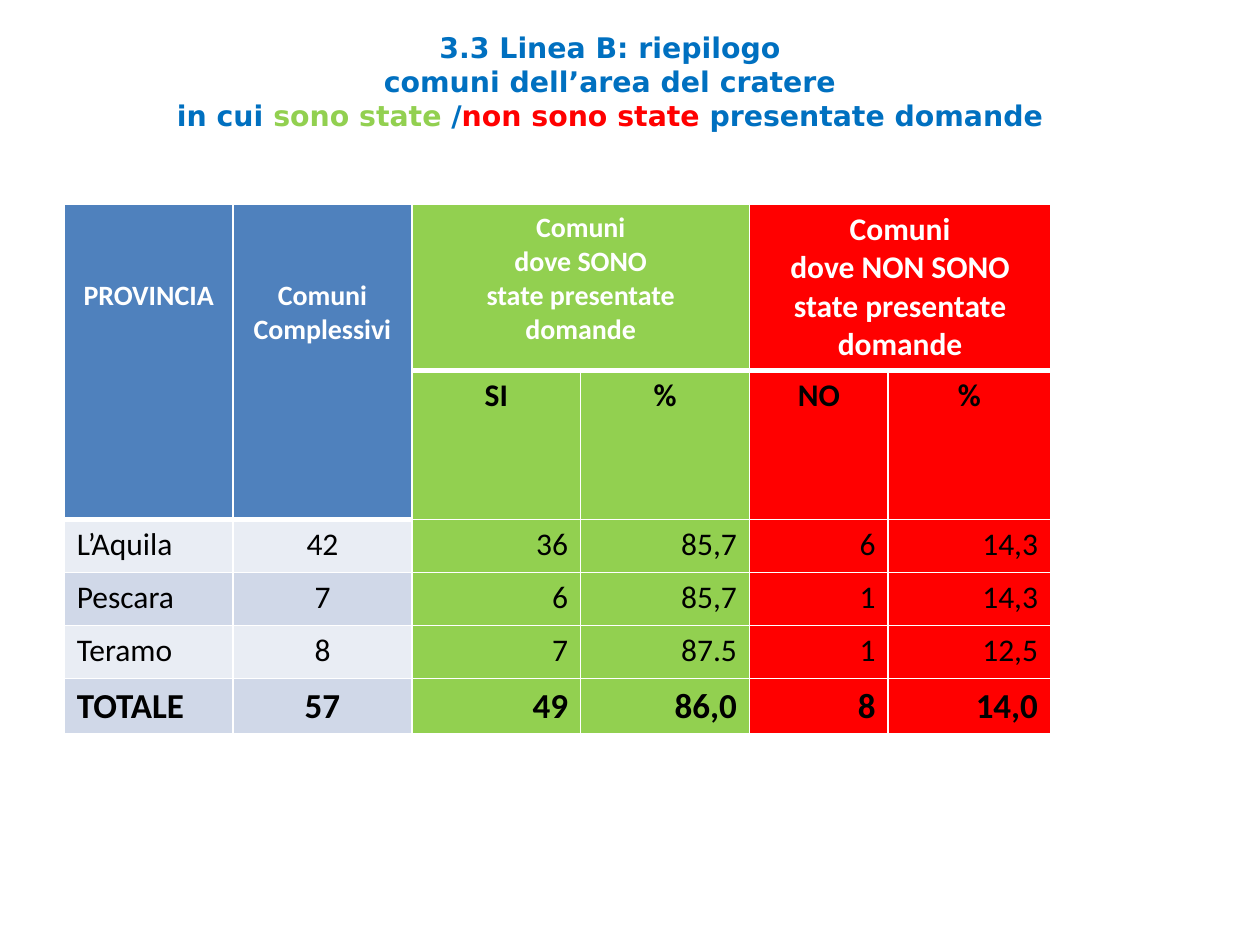
import dataclasses

import lxml.etree
import pptx
import pptx.dml.color
import pptx.enum.text
import pptx.oxml.ns
import pptx.util

Inches = pptx.util.Inches
ALIGN = pptx.enum.text.PP_ALIGN


@dataclasses.dataclass(frozen=True)
class Theme:
    """Colours, fonts and type sizes of the slide."""
    blue: str = "0070C0"
    green: str = "92D050"
    red: str = "FF0000"
    header: str = "4F81BD"
    bands: tuple = ("E9EDF4", "D0D8E8")
    white: str = "FFFFFF"
    black: str = "000000"
    title_font: str = "DejaVu Sans"
    table_font: str = "Calibri"
    title_size: float = 16.2
    small: int = 16
    body: int = 18
    total: int = 20


THEME = Theme()
TITLE = [
    [("3.3 Linea B: riepilogo", THEME.blue)],
    [("comuni dell’area del cratere", THEME.blue)],
    [("in cui ", THEME.blue), ("sono state ", THEME.green), ("/", THEME.blue),
     ("non sono state ", THEME.red), ("presentate domande", THEME.blue)],
]
COLUMNS = [1.34, 1.42, 1.34, 1.34, 1.1, 1.29]
ROWS = [1.31, 1.18, 0.42, 0.42, 0.42, 0.44]
GROUPS = [
    (0, (1, 0), ["PROVINCIA"], THEME.small),
    (1, (1, 1), ["Comuni", "Complessivi"], THEME.small),
    (2, (0, 3), ["Comuni", "dove SONO", "state presentate", "domande"], THEME.small),
    (4, (0, 5), ["Comuni", "dove NON SONO", "state presentate", "domande"], THEME.body),
]
SUBHEADS = ["SI", "%", "NO", "%"]
DATA = [
    ["L’Aquila", "42", "36", "85,7", "6", "14,3"],
    ["Pescara", "7", "6", "85,7", "1", "14,3"],
    ["Teramo", "8", "7", "87.5", "1", "12,5"],
    ["TOTALE", "57", "49", "86,0", "8", "14,0"],
]
DATA_ALIGN = [ALIGN.LEFT, ALIGN.CENTER] + [ALIGN.RIGHT] * 4


def add_run(p, text, font, size, color, bold):
    """Append one formatted run to a paragraph."""
    r = p.add_run()
    r.text = text
    r.font.name = font
    r.font.size = pptx.util.Pt(size)
    r.font.bold = bold
    r.font.color.rgb = pptx.dml.color.RGBColor.from_string(color)


def add_title(s):
    """Place the three-line coloured title."""
    sp = s.shapes.title
    sp.left, sp.top, sp.width, sp.height = map(Inches, (0.59, 0.21, 8.5, 0.87))
    tf = sp.text_frame
    tf.word_wrap = True
    tf.auto_size = pptx.enum.text.MSO_AUTO_SIZE.NONE
    tf.vertical_anchor = pptx.enum.text.MSO_ANCHOR.MIDDLE
    p = tf.paragraphs[0]
    p.alignment = ALIGN.CENTER
    for i, line in enumerate(TITLE):
        if i:
            p.add_line_break()
        for text, color in line:
            add_run(p, text, THEME.title_font, THEME.title_size, color, True)


def write_cell(cell, lines, align, size, color, bold):
    """Write each line as an aligned paragraph of the cell."""
    tf = cell.text_frame
    for i, line in enumerate(lines):
        p = tf.add_paragraph() if i else tf.paragraphs[0]
        p.alignment = align
        add_run(p, line, THEME.table_font, size, color, bold)


def set_borders(cell, widths):
    """Draw white left, right, top and bottom borders, widths in points."""
    tc_pr = cell._tc.get_or_add_tcPr()
    qn = pptx.oxml.ns.qn
    for i, (side, width) in enumerate(zip("LRTB", widths)):
        ln = lxml.etree.Element(qn(f"a:ln{side}"), w=str(pptx.util.Pt(width)))
        fill = lxml.etree.SubElement(ln, qn("a:solidFill"))
        lxml.etree.SubElement(fill, qn("a:srgbClr"), val=THEME.white)
        tc_pr.insert(i, ln)


def cell_fill(row, col):
    """Return the fill colour for a cell position."""
    if col >= 4:
        return THEME.red
    if col >= 2:
        return THEME.green
    return THEME.header if row < 2 else THEME.bands[row % 2]


def style_cell(cell, row, col):
    """Fill the cell and draw a thick rule under its column heading."""
    cell.fill.solid()
    cell.fill.fore_color.rgb = pptx.dml.color.RGBColor.from_string(cell_fill(row, col))
    head_end = 1 if col < 2 else 0
    top = 3 if row == head_end + 1 else 1
    bottom = 3 if row <= head_end else 1
    set_borders(cell, (1, 1, top, bottom))


def add_summary_table(s):
    """Build the table of municipalities by province."""
    frame = s.shapes.add_table(len(ROWS), len(COLUMNS), Inches(0.51), Inches(1.62),
                               Inches(sum(COLUMNS)), Inches(sum(ROWS)))
    table = frame.table
    table.first_row = table.horz_banding = False
    for column, width in zip(table.columns, COLUMNS):
        column.width = Inches(width)
    for row, height in zip(table.rows, ROWS):
        row.height = Inches(height)
    for row in range(len(ROWS)):
        for col in range(len(COLUMNS)):
            style_cell(table.cell(row, col), row, col)
    for col, end, lines, size in GROUPS:
        cell = table.cell(0, col)
        cell.merge(table.cell(*end))
        if col < 2:
            cell.margin_top = Inches(0.59)
        write_cell(cell, lines, ALIGN.CENTER, size, THEME.white, True)
    for col, text in enumerate(SUBHEADS, 2):
        write_cell(table.cell(1, col), [text], ALIGN.CENTER, THEME.body, THEME.black, True)
    for row, values in enumerate(DATA, 2):
        is_total = row == len(ROWS) - 1
        size = THEME.total if is_total else THEME.body
        for col, text in enumerate(values):
            write_cell(table.cell(row, col), [text], DATA_ALIGN[col], size,
                       THEME.black, is_total)


def main():
    """Create and save the slide."""
    prs = pptx.Presentation()
    prs.slide_width, prs.slide_height = Inches(10), Inches(7.5)
    s = prs.slides.add_slide(prs.slide_layouts[5])
    add_title(s)
    add_summary_table(s)
    prs.save("out.pptx")


if __name__ == "__main__":
    main()
